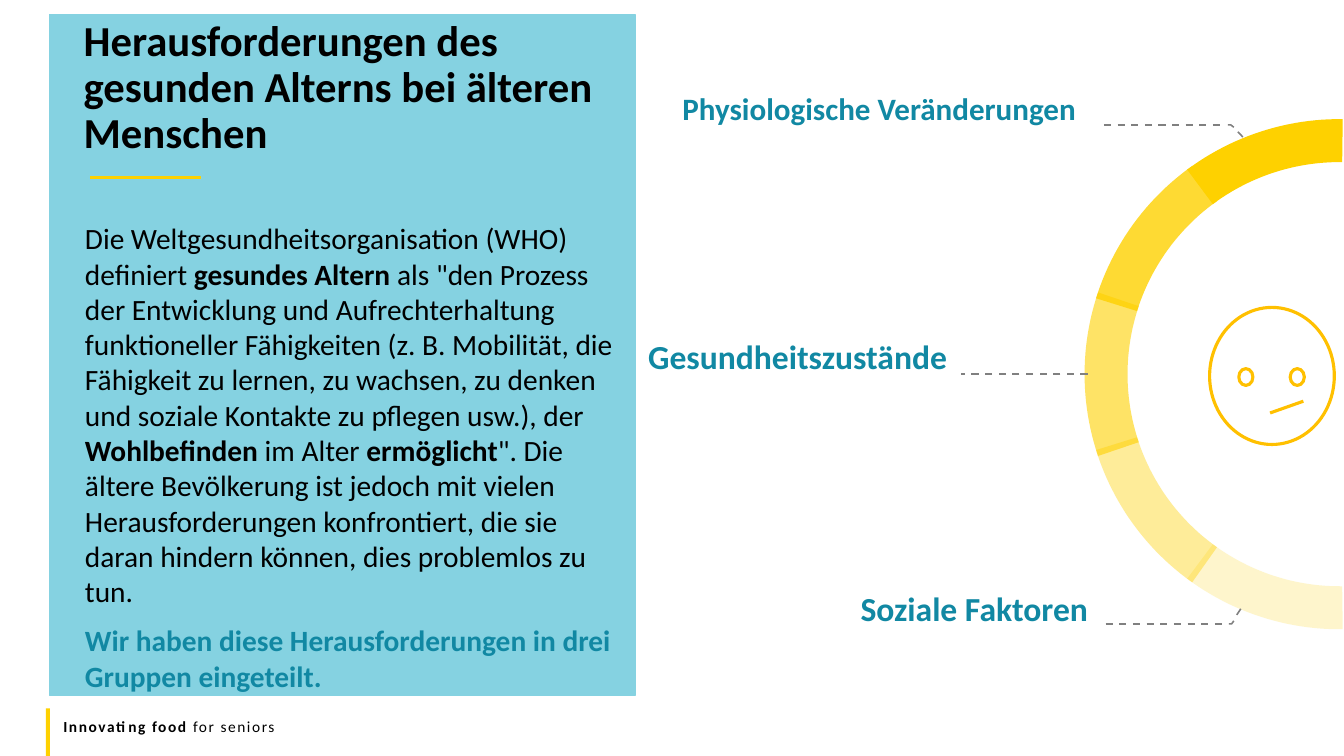
from dataclasses import dataclass
from math import cos, radians, sin

from lxml.etree import SubElement
from pptx import Presentation
from pptx.dml.color import RGBColor
from pptx.enum.shapes import MSO_CONNECTOR, MSO_SHAPE
from pptx.enum.text import MSO_ANCHOR, MSO_AUTO_SIZE, PP_ALIGN
from pptx.oxml.ns import qn
from pptx.util import Pt

Point = tuple[float, float]


@dataclass(frozen=True)
class Theme:
    font: str = "Calibri"
    black: str = "000000"
    panel: str = "85D2E1"
    teal: str = "1188A3"
    yellow: str = "FED100"
    face: str = "FFC000"
    grey: str = "808080"
    title_size: float = 30.5
    body_size: float = 21
    footer_size: float = 11
    accent_width: float = 2.25
    leader_width: float = 1.13


@dataclass(frozen=True)
class Box:
    left: float
    top: float
    width: float
    height: float

    def lengths(self) -> tuple[Pt, Pt, Pt, Pt]:
        return Pt(self.left), Pt(self.top), Pt(self.width), Pt(self.height)


@dataclass(frozen=True)
class Leader:
    start: Point
    end_x: float
    corner: tuple[Point, ...] = ()
    tail: tuple[Point, ...] = ()


@dataclass(frozen=True)
class Label:
    text: str
    size: float
    box: Box
    leader: Leader


@dataclass(frozen=True)
class Segment:
    middle_angle: float
    opacity: int


THEME = Theme()
RING_CENTRE = (956.9, 267.3)
OUTER_RADIUS, INNER_RADIUS = 182.2, 151.5
HALF_SPAN = 18.7  # half of 36 degrees plus a small overlap
DASH, DASH_PITCH = 5.1, 9.74

SEGMENTS = [Segment(0, 60), Segment(72, 100), Segment(36, 80),
            Segment(-72, 20), Segment(-36, 40)]
LABELS = [
    Label("Physiologische Veränderungen", 22.2, Box(479.8, 63.4, 296, 44.6),
          Leader((788.5, 89.2), 872, ((877, 89.2), (879.1, 89.2), (881.3, 90.9)),
                 ((884.2, 94.2), (887.8, 97.9)))),
    Label("Gesundheitszustände", 24, Box(423.7, 239.4, 259.9, 34.6),
          Leader((776.9, 267.3), 686.2)),
    Label("Soziale Faktoren", 24, Box(505.7, 419.4, 278.6, 34.6),
          Leader((789.8, 445.6), 873, ((877.7, 445.6), (879.8, 445.6), (881.3, 443.5)),
                 ((883.4, 439.2), (886.3, 434.9)))),
]
FACE_OVALS = [Box(864, 219.6, 89.1, 97.9), Box(921.6, 263.3, 10.1, 12),
              Box(884.9, 263.3, 10.1, 12)]
BODY = [
    [("Die Weltgesundheitsorganisation (WHO) definiert ", False),
     ("gesundes Altern ", True),
     ('als "den Prozess der Entwicklung und Aufrechterhaltung funktioneller '
      "Fähigkeiten (z. B. Mobilität, die Fähigkeit zu lernen, zu wachsen, zu denken "
      "und soziale Kontakte zu pflegen usw.), der ", False),
     ("Wohlbefinden ", True), ("im Alter ", False), ("ermöglicht", True),
     ('". Die ältere Bevölkerung ist jedoch mit vielen Herausforderungen '
      "konfrontiert, die sie daran hindern können, dies problemlos zu tun.", False)],
    [("Wir haben diese Herausforderungen in drei Gruppen eingeteilt.", True)],
]


def style_run(run, size: float, color: str, bold: bool = True) -> None:
    run.font.name = THEME.font
    run.font.size = Pt(size)
    run.font.bold = bold
    run.font.color.rgb = RGBColor.from_string(color)


def prepare_frame(shape):
    frame = shape.text_frame
    frame.word_wrap = True
    frame.auto_size = MSO_AUTO_SIZE.NONE
    frame.vertical_anchor = MSO_ANCHOR.TOP
    return frame


def fill_panel(shape) -> None:
    shape.fill.solid()
    shape.fill.fore_color.rgb = RGBColor.from_string(THEME.panel)
    style_line(shape, THEME.panel, 0.75)


def style_line(shape, color: str, width: float) -> None:
    shape.line.color.rgb = RGBColor.from_string(color)
    shape.line.width = Pt(width)


def draw_line(slide, start: Point, end: Point, color: str, width: float) -> None:
    line = slide.shapes.add_connector(
        MSO_CONNECTOR.STRAIGHT, *(Pt(value) for value in (*start, *end)))
    style_line(line, color, width)
    SubElement(line.element.spPr, qn("a:effectLst"))


def draw_outline(slide, points: list[Point], close: bool):
    corners = [(Pt(x), Pt(y)) for x, y in points]
    builder = slide.shapes.build_freeform(*corners[0])
    builder.add_line_segments(corners[1:], close=close)
    shape = builder.convert_to_shape()
    shape.shadow.inherit = False
    return shape


def draw_leader(slide, leader: Leader) -> None:
    x, y = leader.start
    direction = 1 if leader.end_x > x else -1
    while (leader.end_x - x) * direction > 0:
        length = min(DASH, abs(leader.end_x - x))
        draw_line(slide, (x, y), (x + direction * length, y), THEME.grey, THEME.leader_width)
        x += direction * DASH_PITCH
    if leader.corner:
        corner = draw_outline(slide, leader.corner, close=False)
        corner.fill.background()
        style_line(corner, THEME.grey, THEME.leader_width)
        draw_line(slide, *leader.tail, THEME.grey, THEME.leader_width)


def ring_point(angle: float, radius: float) -> Point:
    """Angle in degrees from the left end of the ring, upwards."""
    return (RING_CENTRE[0] - radius * cos(radians(angle)),
            RING_CENTRE[1] - radius * sin(radians(angle)))


def draw_segment(slide, segment: Segment) -> None:
    steps = 24
    angles = [segment.middle_angle + HALF_SPAN * (2 * step / steps - 1)
              for step in range(steps + 1)]
    points = [ring_point(angle, OUTER_RADIUS) for angle in angles]
    points += [ring_point(angle, INNER_RADIUS) for angle in reversed(angles)]
    shape = draw_outline(slide, points, close=True)
    shape.fill.solid()
    shape.fill.fore_color.rgb = RGBColor.from_string(THEME.yellow)
    shape.line.fill.background()
    if segment.opacity < 100:
        color = shape.element.spPr.find(qn("a:solidFill")).find(qn("a:srgbClr"))
        SubElement(color, qn("a:alpha"), val=str(segment.opacity * 1000))


def draw_label(slide, label: Label) -> None:
    frame = prepare_frame(slide.shapes.add_textbox(*label.box.lengths()))
    frame.text = label.text
    paragraph = frame.paragraphs[0]
    paragraph.alignment = PP_ALIGN.RIGHT
    paragraph.line_spacing = 0.9
    style_run(paragraph.runs[0], label.size, THEME.teal)


def draw_title(slide) -> None:
    title = slide.shapes.title
    title.left, title.top, title.width, title.height = Box(35.3, 10.5, 418.3, 116.2).lengths()
    fill_panel(title)
    frame = prepare_frame(title)
    frame.margin_left = Pt(24.5)
    frame.text = "Herausforderungen des gesunden Alterns bei älteren Menschen"
    paragraph = frame.paragraphs[0]
    paragraph.alignment = PP_ALIGN.LEFT
    paragraph.line_spacing = 0.9
    style_run(paragraph.runs[0], THEME.title_size, THEME.black)


def draw_body(slide) -> None:
    panel = slide.shapes.add_textbox(*Box(35.3, 115.9, 418.3, 380.9).lengths())
    fill_panel(panel)
    frame = prepare_frame(panel)
    frame.margin_left, frame.margin_top, frame.margin_right = Pt(25.4), Pt(41.5), Pt(4)
    for index, pieces in enumerate(BODY):
        paragraph = frame.add_paragraph() if index else frame.paragraphs[0]
        if index:
            paragraph.space_before = Pt(10)
        for text, bold in pieces:
            run = paragraph.add_run()
            run.text = text
            style_run(run, THEME.body_size, THEME.teal if index else THEME.black, bold)


def draw_face(slide) -> None:
    for box in FACE_OVALS:
        oval = slide.shapes.add_shape(MSO_SHAPE.OVAL, *box.lengths())
        oval.shadow.inherit = False
        oval.fill.background()
        style_line(oval, THEME.face, THEME.accent_width)
    draw_line(slide, (907.2, 295), (931, 286.6), THEME.face, THEME.accent_width)


def draw_footer(slide) -> None:
    footer = slide.shapes.add_textbox(*Box(38.2, 509, 864, 20.9).lengths())
    frame = prepare_frame(footer)
    for text, bold in (("Innovating food ", True), ("for seniors", False)):
        run = frame.paragraphs[0].add_run()
        run.text = text
        style_run(run, THEME.footer_size, THEME.black, bold)
    for properties in footer.element.iter(qn("a:rPr")):
        properties.set("spc", "110")
    bar = slide.shapes.add_shape(MSO_SHAPE.RECTANGLE, *Box(32.8, 506, 2.9, 34).lengths())
    bar.shadow.inherit = False
    bar.fill.solid()
    bar.fill.fore_color.rgb = RGBColor.from_string(THEME.yellow)
    bar.line.fill.background()


def main() -> None:
    presentation = Presentation()
    presentation.slide_width, presentation.slide_height = Pt(960), Pt(540)
    slide = presentation.slides.add_slide(presentation.slide_layouts[5])
    # Ring, leaders and labels
    for segment in SEGMENTS:
        draw_segment(slide, segment)
    for label in LABELS:
        draw_leader(slide, label.leader)
        draw_label(slide, label)
    # Text panel with accent line
    draw_title(slide)
    draw_body(slide)
    draw_line(slide, (64.5, 126.7), (143.3, 126.7), THEME.yellow, THEME.accent_width)
    # Face and footer
    draw_face(slide)
    draw_footer(slide)
    presentation.save("out.pptx")


if __name__ == "__main__":
    main()
